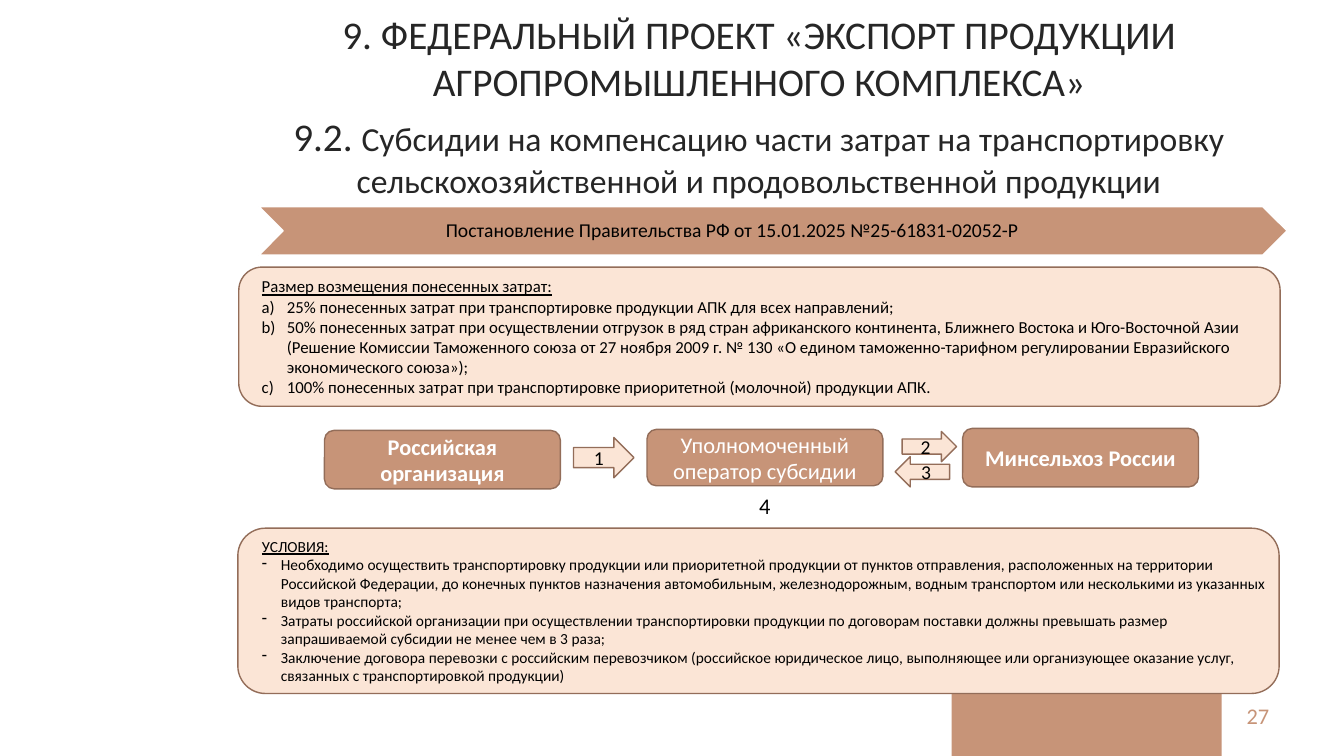
from lxml.etree import SubElement
from pptx import Presentation
from pptx.dml.color import RGBColor
from pptx.enum.shapes import MSO_SHAPE as Shape
from pptx.enum.text import MSO_ANCHOR as Anchor, PP_ALIGN as Align
from pptx.oxml.ns import qn
from pptx.util import Pt

COLORS = {
    "clay": "C79478",
    "outline": "936D59",
    "peach": "FBE5D6",
    "white": "FFFFFF",
    "black": "000000",
    "title": "262626",
}
INSETS = (7.2, 3.6, 7.2, 3.6)
PANEL_INSETS = (11.5, 3, 3, 3)


class SlideBuilder:
    font_name = "Calibri"

    def __init__(self, slide):
        self.slide = slide

    def color(self, name):
        return RGBColor.from_string(COLORS[name])

    def block(self, kind, box, fill, line=None):
        shape = self.slide.shapes.add_shape(kind, *map(Pt, box))
        shape.shadow.inherit = False
        shape.fill.solid()
        shape.fill.fore_color.rgb = self.color(fill)
        if line:
            shape.line.color.rgb = self.color(line)
            shape.line.width = Pt(1)
        else:
            shape.line.fill.background()
        return shape

    def frame(self, shape, insets=INSETS, anchor=Anchor.MIDDLE):
        frame = shape.text_frame
        frame.word_wrap = True
        frame.vertical_anchor = anchor
        (frame.margin_left, frame.margin_top,
         frame.margin_right, frame.margin_bottom) = map(Pt, insets)
        return frame

    def style(self, paragraph, size, color, align=Align.LEFT, bold=False):
        paragraph.alignment = align
        font = paragraph.font
        font.name = self.font_name
        font.size = Pt(size)
        font.bold = bold
        font.color.rgb = self.color(color)

    def text(self, box, content, size, color, align, insets=INSETS, anchor=Anchor.MIDDLE):
        frame = self.frame(self.slide.shapes.add_textbox(*map(Pt, box)), insets, anchor)
        paragraph = frame.paragraphs[0]
        paragraph.text = content
        self.style(paragraph, size, color, align)
        return frame

    def label(self, kind, box, content, size, fill, color, bold=False, insets=INSETS):
        shape = self.block(kind, box, fill, "outline")
        paragraph = self.frame(shape, insets).paragraphs[0]
        paragraph.text = content
        self.style(paragraph, size, color, Align.CENTER, bold)

    def panel(self, box, heading, items, size, indent, marker, **marker_attrs):
        shape = self.block(Shape.ROUNDED_RECTANGLE, box, "peach", "outline")
        frame = self.frame(shape, PANEL_INSETS)
        first = frame.paragraphs[0]
        first.text = heading
        self.style(first, size, "black")
        first.font.underline = True
        for item in items:
            paragraph = frame.add_paragraph()
            paragraph.text = item
            properties = paragraph._p.get_or_add_pPr()
            properties.set("marL", str(Pt(indent)))
            properties.set("indent", str(-Pt(indent)))
            SubElement(properties, qn(marker), marker_attrs)
            self.style(paragraph, size, "black")


def main():
    deck = Presentation()
    deck.slide_width, deck.slide_height = Pt(960), Pt(540)
    page = SlideBuilder(deck.slides.add_slide(deck.slide_layouts[6]))

    page.block(Shape.RECTANGLE, (679.7, 472.3, 193, 67.7), "clay")
    page.text((734.4, 496.8, 179.3, 28.8), "27", 16, "clay", Align.RIGHT)

    title = page.text(
        (151.9, 3.6, 780.5, 144),
        "9. ФЕДЕРАЛЬНЫЙ ПРОЕКТ «ЭКСПОРТ ПРОДУКЦИИ АГРОПРОМЫШЛЕННОГО КОМПЛЕКСА»",
        28, "title", Align.CENTER, anchor=Anchor.TOP)
    title.paragraphs[0].space_after = Pt(6)
    subtitle = title.add_paragraph()
    subtitle.add_run().text = "9.2. "
    subject = subtitle.add_run()
    subject.text = ("Субсидии на компенсацию части затрат на транспортировку "
                    "сельскохозяйственной и продовольственной продукции")
    subject.font.size = Pt(24)
    page.style(subtitle, 28, "title", Align.CENTER)
    subtitle.space_after = Pt(6)

    page.block(Shape.CHEVRON, (185, 147.6, 734.4, 34.6), "clay", "white")
    decree = page.text(
        (187.2, 147.6, 668.9, 34.6),
        "Постановление Правительства РФ от 15.01.2025 №25-61831-02052-Р",
        14, "black", Align.CENTER, insets=(4.3, 1.4, 1.4, 1.4))
    decree.paragraphs[0].line_spacing = 0.9

    page.panel(
        (170.6, 190.8, 743.8, 99.4), "Размер возмещения понесенных затрат:",
        [
            "25% понесенных затрат при транспортировке продукции АПК для всех направлений;",
            "50% понесенных затрат при осуществлении отгрузок в ряд стран африканского "
            "континента, Ближнего Востока и Юго-Восточной Азии (Решение Комиссии Таможенного "
            "союза от 27 ноября 2009 г. № 130 «О едином таможенно-тарифном регулировании "
            "Евразийского экономического союза»);",
            "100% понесенных затрат при транспортировке приоритетной (молочной) продукции АПК.",
        ],
        12, 18, "a:buAutoNum", type="alphaLcParenR")

    page.panel(
        (169.9, 377.3, 743.8, 118.1), "УСЛОВИЯ:",
        [
            "Необходимо осуществить транспортировку продукции или приоритетной продукции от "
            "пунктов отправления, расположенных на территории Российской Федерации, до конечных "
            "пунктов назначения автомобильным, железнодорожным, водным транспортом или "
            "несколькими из указанных видов транспорта;",
            "Затраты российской организации при осуществлении транспортировки продукции по "
            "договорам поставки должны превышать размер запрашиваемой субсидии не менее чем "
            "в 3 раза;",
            "Заключение договора перевозки с российским перевозчиком (российское юридическое "
            "лицо, выполняющее или организующее оказание услуг, связанных с транспортировкой "
            "продукции)",
        ],
        11, 13.5, "a:buChar", char="-")

    participants = [
        ((231.8, 307.4, 168.5, 41.8), "Российская организация", True, INSETS),
        ((462.2, 306.7, 168.5, 40.3), "Уполномоченный оператор субсидии", False, (3, 3, 3, 3)),
        ((687.6, 306, 168.5, 41.8), "Минсельхоз России", True, INSETS),
    ]
    for box, name, bold, insets in participants:
        page.label(Shape.ROUNDED_RECTANGLE, box, name, 16, "clay", "white", bold, insets)

    steps = [
        (Shape.RIGHT_ARROW, (409.7, 312.5, 43.2, 28.8), "1"),
        (Shape.RIGHT_ARROW, (644.4, 308.2, 38.9, 21.6), "2"),
        (Shape.LEFT_ARROW, (639.4, 326.2, 38.9, 21.6), "3"),
    ]
    for kind, box, number in steps:
        page.label(kind, box, number, 14, "peach", "black", insets=(0, 0, 0, 0))
    page.text((542.2, 351.4, 12.2, 19.4), "4", 16, "black", Align.LEFT,
              insets=(0, 0, 0, 0), anchor=Anchor.TOP)

    deck.save("out.pptx")


if __name__ == "__main__":
    main()
